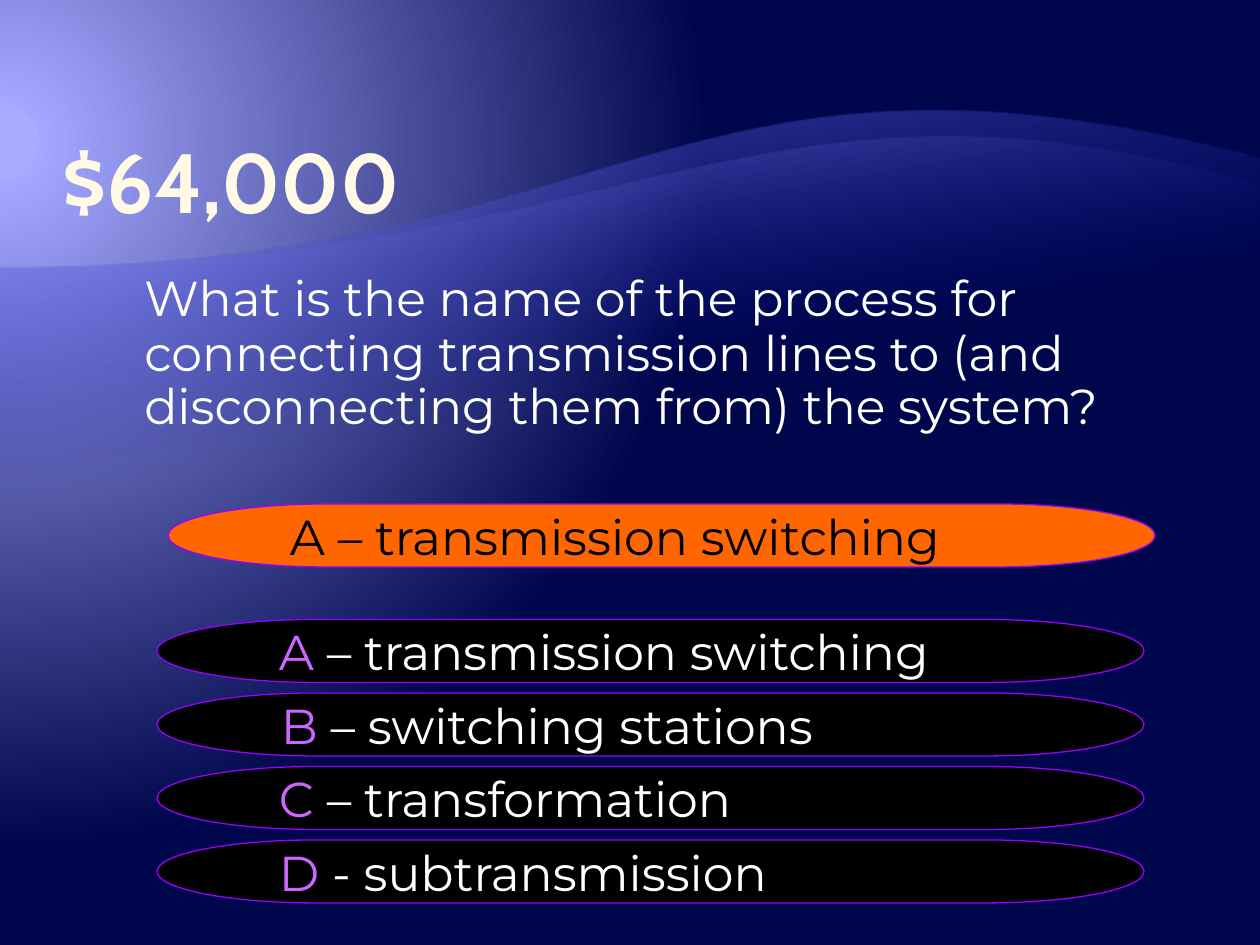
from pptx import Presentation
from pptx.dml.color import RGBColor
from pptx.enum.shapes import MSO_SHAPE
from pptx.enum.text import MSO_ANCHOR, PP_ALIGN
from pptx.oxml import parse_xml
from pptx.oxml.ns import nsdecls, qn
from pptx.util import Emu, Pt

PX = 914400 / 126
WIDTH, HEIGHT = 1260, 945
COLORS = {
    "title": "FFF9E5", "edge": "8F8462", "text": "FFFFFF", "letter": "CC66FF",
    "black": "000000", "reveal": "FF6600", "outline": "9900FF", "wave": "000D9E",
    "glow": "A8ACFF", "halo": "A3A7FF", "night": "00064B", "crest": "797FFF",
}
TITLE = "$64,000"
QUESTION = ("What is the name of the process for connecting transmission lines "
            "to (and disconnecting them from) the system?")
ANSWERS = [
    ("A ", "– transmission switching", 63),
    ("B ", "– switching stations", 65),
    ("C ", "– transformation", 63),
    ("D ", "- subtransmission", 63),
]
REVEAL = "A – transmission switching"
BACKGROUND_STOPS = [(5, "glow", 100), (5, "halo", 100), (90, "night", 100)]
WAVES = [
    {"curve": [(0, 268), (630, 268), (673, 6), (1260, 158)], "bottom": 924,
     "stops": [(65, "wave", 0), (100, "crest", 55)]},
    {"curve": [(0, 268), (630, 268), (753, 39), (1260, 185)], "bottom": 803,
     "stops": [(65, "wave", 0), (100, "halo", 30)]},
]
ANSWER_LEFT, LAST_ANSWER_TOP, ANSWER_PITCH = 157, 840, 147 / 2
ANSWER_SIZE = (987, 63)
QUESTION_INDENT = 48


def emu(px):
    return Emu(round(px * PX))


def color(name):
    return RGBColor.from_string(COLORS[name])


def gradient(stops, direction):
    marks = "".join(
        f'<a:gs pos="{pos * 1000}"><a:srgbClr val="{COLORS[name]}">'
        f'<a:alpha val="{alpha * 1000}"/></a:srgbClr></a:gs>'
        for pos, name, alpha in stops)
    return (f'<a:gradFill {nsdecls("a")} rotWithShape="1">'
            f"<a:gsLst>{marks}</a:gsLst>{direction}</a:gradFill>")


def paint_background(slide):
    circle = ('<a:path path="circle"><a:fillToRect l="20000" t="30000" '
              'r="135000" b="100000"/></a:path>')
    fill = gradient(BACKGROUND_STOPS, circle)
    slide.shapes._spTree.addprevious(parse_xml(
        f'<p:bg {nsdecls("p", "a")}><p:bgPr>{fill}<a:effectLst/></p:bgPr></p:bg>'))


def add_wave(slide, curve, bottom, stops):
    top = curve[-1][1]
    turned = [(WIDTH - x, top + bottom - y) for x, y in curve]
    builder = slide.shapes.build_freeform(0, top, scale=PX)
    builder.add_line_segments([(WIDTH, top), turned[0], turned[-1]], close=True)
    wave = builder.convert_to_shape()
    wave.rotation = 180
    wave.shadow.inherit = False
    wave.line.fill.background()
    geometry = wave._element.spPr.find(qn("a:custGeom"))
    straight = list(geometry.iter(qn("a:lnTo")))[-1]
    points = "".join(f'<a:pt x="{x}" y="{y - top}"/>' for x, y in turned[1:])
    bend = parse_xml(f'<a:cubicBezTo {nsdecls("a")}>{points}</a:cubicBezTo>')
    straight.getparent().replace(straight, bend)
    direction = f'<a:lin ang="{80 * 60000}" scaled="0"/>'
    geometry.addnext(parse_xml(gradient(stops, direction)))


def add_run(paragraph, text, name, size=28, font="Montserrat", bold=False):
    run = paragraph.add_run()
    run.text = text
    run.font.size = Pt(size)
    run.font.name = font
    run.font.bold = bold
    run.font.color.rgb = color(name)
    return run


def indent(paragraph, left, first=0):
    properties = paragraph._p.get_or_add_pPr()
    properties.set("marL", str(emu(left)))
    properties.set("indent", str(emu(first)))


def add_title(slide):
    frame = slide.shapes.add_textbox(emu(63), emu(73), emu(1134), emu(158)).text_frame
    frame.word_wrap = True
    frame.vertical_anchor = MSO_ANCHOR.BOTTOM
    frame.margin_left = frame.margin_right = 0
    frame.margin_top = frame.margin_bottom = emu(1)
    run = add_run(frame.paragraphs[0], TITLE, "title", 48, "Cabin", True)
    run._r.get_or_add_rPr().insert(0, parse_xml(
        f'<a:ln {nsdecls("a")} w="500"><a:solidFill>'
        f'<a:srgbClr val="{COLORS["edge"]}"/></a:solidFill></a:ln>'))


def add_question(slide):
    frame = slide.shapes.add_textbox(emu(84), emu(262), emu(1071), emu(221)).text_frame
    frame.word_wrap = True
    paragraph = frame.paragraphs[0]
    paragraph.line_spacing = 0.9
    indent(paragraph, QUESTION_INDENT, -QUESTION_INDENT)
    paragraph._p.pPr.find(qn("a:lnSpc")).addnext(parse_xml(
        f'<a:spcBef {nsdecls("a")}><a:spcPct val="20000"/></a:spcBef>'))
    add_run(paragraph, "\t", "black", 32)
    add_run(paragraph, QUESTION, "text")


def add_answer(slide, left, top, fill, margin, runs):
    answer = slide.shapes.add_shape(
        MSO_SHAPE.FLOWCHART_TERMINATOR, emu(left), emu(top), *map(emu, ANSWER_SIZE))
    answer.shadow.inherit = False
    answer.fill.solid()
    answer.fill.fore_color.rgb = color(fill)
    answer.line.color.rgb = color("outline")
    answer.line.width = Pt(0.75)
    frame = answer.text_frame
    frame.word_wrap = False
    frame.vertical_anchor = MSO_ANCHOR.MIDDLE
    paragraph = frame.paragraphs[0]
    paragraph.alignment = PP_ALIGN.LEFT
    indent(paragraph, margin)
    for text, name in runs:
        add_run(paragraph, text, name)


def main():
    deck = Presentation()
    deck.slide_width, deck.slide_height = emu(WIDTH), emu(HEIGHT)
    slide = deck.slides.add_slide(deck.slide_layouts[6])
    paint_background(slide)
    for wave in WAVES:
        add_wave(slide, **wave)
    add_title(slide)
    add_question(slide)
    first_top = LAST_ANSWER_TOP - (len(ANSWERS) - 1) * ANSWER_PITCH
    for row, (letter, answer, margin) in enumerate(ANSWERS):
        add_answer(slide, ANSWER_LEFT, first_top + row * ANSWER_PITCH, "black",
                   margin, [(letter, "letter"), (answer, "text")])
    add_answer(slide, 168, 504, "reveal", 63, [(REVEAL, "black")])
    deck.save("out.pptx")


if __name__ == "__main__":
    main()
